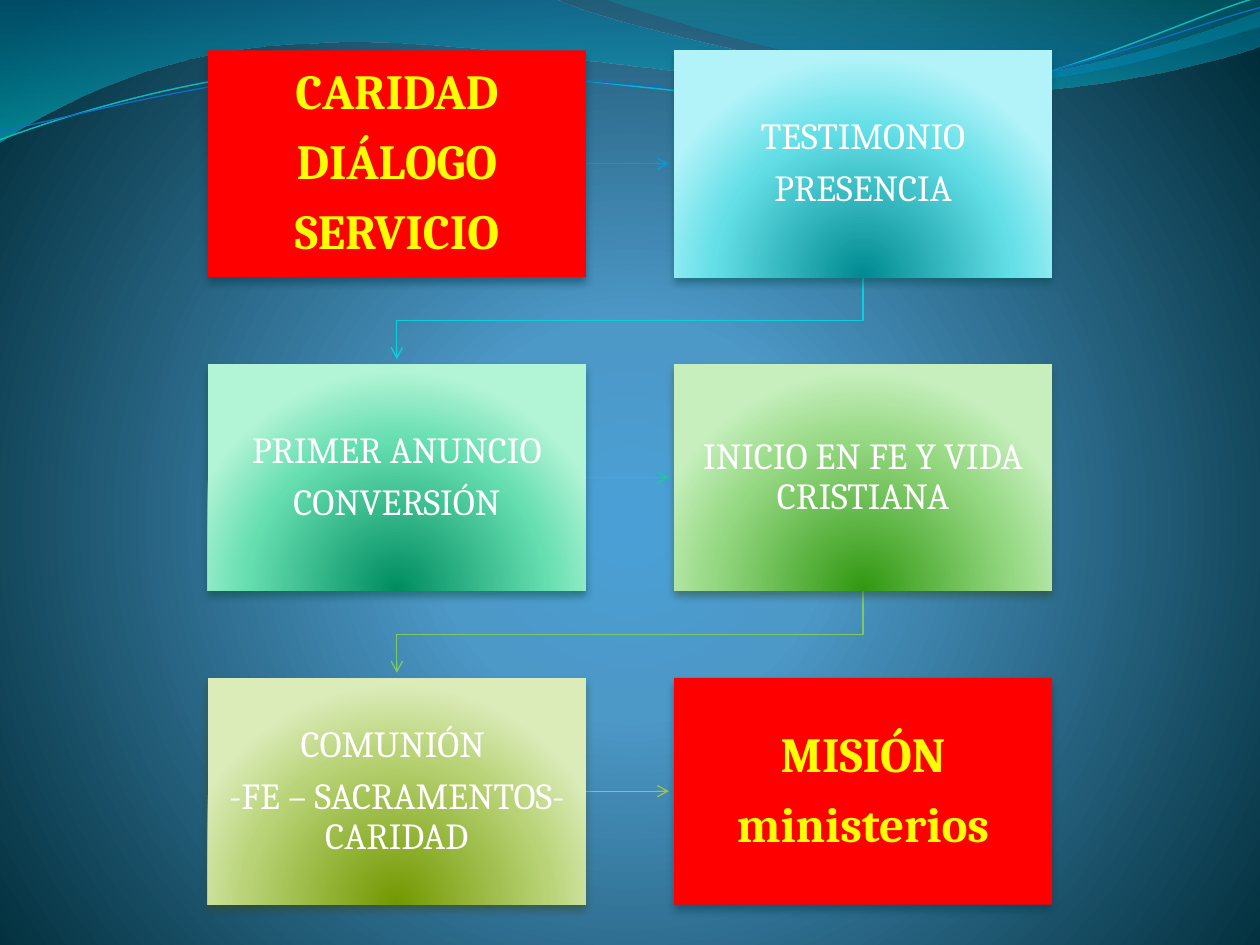
import math
from dataclasses import dataclass
from typing import Optional

from lxml import etree
from pptx import Presentation
from pptx import util as u
from pptx.dml import color as c
from pptx.enum import shapes, text
from pptx.oxml import ns

RGB = c.RGBColor
RED, YELLOW, WHITE = RGB(255, 0, 0), RGB(255, 255, 0), RGB(255, 255, 255)
BLUE, TEAL, NAVY = RGB(0x0F, 0x6F, 0xC6), RGB(0x0A, 0xB8, 0xBF), RGB(0x00, 0x37, 0x4C)
LEFT, TOP, WIDTH, HEIGHT = 1.65, 0.4, 3, 1.8
COLUMN_STEP, ROW_STEP, ARROW_GAP, ARROW_HEIGHT = 3.7, 2.49, 0.04, 0.1
STRAND_TURN = -2.7

Point = tuple[float, float]
Area = tuple[float, float, float, float]
Stop = tuple[int, str, int]


@dataclass
class Step:
    lines: list[str]
    shadow: RGB
    arrow: Optional[RGB] = None
    glow: Optional[list[str]] = None


@dataclass
class Band:
    area: Area
    pieces: list[list[Point]]
    stops: list[Stop]


@dataclass
class Strand:
    area: Area
    pieces: list[list[Point]]
    colour: RGB
    width: float


STEPS = [
    Step(["CARIDAD", "DIÁLOGO", "SERVICIO"], NAVY, RGB(0x00, 0x9D, 0xD9)),
    Step(["TESTIMONIO", "PRESENCIA"], RGB(0x02, 0x4B, 0x4E), RGB(0x0B, 0xD0, 0xD9),
         ["008A91", "64DFE7", "B1F3F9"]),
    Step(["PRIMER ANUNCIO", "CONVERSIÓN"], RGB(0x04, 0x4A, 0x37), RGB(0x10, 0xCF, 0x9B),
         ["008C60", "65DEB0", "B2F4D6"]),
    Step(["INICIO EN FE Y VIDA CRISTIANA"], RGB(0x2B, 0x48, 0x21), RGB(0x7C, 0xCA, 0x62),
         ["319811", "95D882", "C6EFBD"]),
    Step(["COMUNIÓN ", "-FE – SACRAMENTOS-CARIDAD"], RGB(0x3A, 0x45, 0x19),
         RGB(0xA5, 0xC2, 0x49), ["729800", "B8D275", "DBECB9"]),
    Step(["MISIÓN", "ministerios"], NAVY),
]

BANDS = [
    Band((-0.01, -0.01, 10.02, 1.14), [
        [(0, 0)],
        [(4.4, -0.01)],
        [(4.76, 0.17), (6.64, 0.63), (7.58, 0.63)],
        [(8.53, 0.63), (9.58, 0.26), (10, 0.09)],
        [(10.01, 0.36)],
        [(9.83, 0.44), (8.7, 0.76), (7.46, 0.75)],
        [(6.22, 0.75), (3.82, 0.28), (2.57, 0.34)],
        [(1.29, 0.36), (0.46, 0.83), (-0.01, 1.13)],
        [(0, 0)],
    ], [(0, "0074A1", 45), (100, "00C6CF", 55)]),
    Band((4.79, -0.01, 5.21, 0.7), [
        [(4.79, -0.01)],
        [(5.09, 0.11), (6.82, 0.62), (7.69, 0.65)],
        [(8.56, 0.69), (9.61, 0.32), (10, 0.21)],
        [(10, 0)],
        [(4.79, -0.01)],
    ], [(0, "00A1A9", 30), (80, "008BBF", 45)]),
]

STRANDS = [
    Strand((-0.02, 0.22, 10.02, 0.71), [
        [(0, 1.11)],
        [(0.48, 0.93), (1.58, 0.57), (2.77, 0.52)],
        [(3.95, 0.47), (5.93, 0.89), (7.13, 0.8)],
        [(8.33, 0.71), (9.38, 0.15), (9.98, -0.02)],
    ], TEAL, 0.85),
    Strand((-0.02, 0.3, 10.03, 0.58), [
        [(0, 1.04)],
        [(0.47, 0.96), (1.64, 0.61), (2.83, 0.56)],
        [(4.03, 0.51), (5.97, 0.84), (7.17, 0.75)],
        [(8.36, 0.67), (9.41, 0.21), (10, 0.06)],
    ], BLUE, 0.75),
]


def add_node(parent, tag: str, **attributes):
    node = etree.SubElement(parent, ns.qn(tag))
    for name, value in attributes.items():
        node.set(name, str(value))
    return node


def set_gradient(fill, parent, stops: list[Stop], focus=None) -> None:
    fill.solid()
    solid = parent.find(ns.qn("a:solidFill"))
    gradient = etree.Element(ns.qn("a:gradFill"), rotWithShape="1")
    stop_list = add_node(gradient, "a:gsLst")
    for place, colour, alpha in stops:
        stop = add_node(stop_list, "a:gs", pos=place * 1000)
        tint = add_node(stop, "a:srgbClr", val=colour)
        if alpha < 100:
            add_node(tint, "a:alpha", val=alpha * 1000)
    if focus:
        circle = add_node(gradient, "a:path", path="circle")
        add_node(circle, "a:fillToRect", **{side: share * 1000 for side, share in zip("ltrb", focus)})
    else:
        add_node(gradient, "a:lin", ang=5400000, scaled=1)
    parent.replace(solid, gradient)


def turn(point: Point, area: Area, degrees: float) -> Point:
    left, top, width, height = area
    x, y = point[0] - left - width / 2, point[1] - top - height / 2
    cos, sin = math.cos(math.radians(degrees)), math.sin(math.radians(degrees))
    return x * cos - y * sin + width / 2, x * sin + y * cos + height / 2


def add_outline(page, area: Area, pieces: list[list[Point]], *, close: bool = False, rotation: float = 0):
    left, top, width, height = area
    builder = page.shapes.build_freeform(u.Inches(left), u.Inches(top))
    builder.add_line_segments([(u.Inches(left + width), u.Inches(top + height))], close=False)
    outline = builder.convert_to_shape()
    outline.rotation = rotation
    outline.shadow.inherit = False
    outline.fill.background()
    outline.line.fill.background()
    track = outline._element.spPr.find(".//" + ns.qn("a:path"))
    for node in list(track):
        track.remove(node)
    for index, piece in enumerate(pieces):
        tag = "a:cubicBezTo" if len(piece) == 3 else "a:lnTo" if index else "a:moveTo"
        move = add_node(track, tag)
        for point in piece:
            x, y = turn(point, area, -rotation)
            add_node(move, "a:pt", x=u.Inches(x), y=u.Inches(y))
    if close:
        add_node(track, "a:close")
    return outline


def set_line(line, colour: RGB, width: float, arrow: bool = False) -> None:
    line.color.rgb = colour
    line.width = u.Pt(width)
    if arrow:
        add_node(line._get_or_add_ln(), "a:tailEnd", type="arrow")


def write(box, lines: list[str], *, size: int, colour: RGB, bold: bool, inset: float) -> None:
    frame = box.text_frame
    frame.word_wrap = True
    frame.vertical_anchor = text.MSO_ANCHOR.MIDDLE
    frame.margin_left = frame.margin_right = u.Inches(inset)
    frame.margin_top = frame.margin_bottom = u.Inches(inset)
    for index, line in enumerate(lines):
        para = frame.add_paragraph() if index else frame.paragraphs[0]
        para.alignment = text.PP_ALIGN.CENTER
        para.line_spacing = 0.9
        add_node(add_node(para._p.get_or_add_pPr(), "a:spcAft"), "a:spcPct", val=35000)
        span = para.add_run()
        span.text = line
        span.font.name, span.font.size, span.font.bold = "Cambria", u.Pt(size), bold
        span.font.color.rgb = colour


def add_step(page, step: Step, x: float, y: float) -> None:
    box = page.shapes.add_shape(shapes.MSO_SHAPE.RECTANGLE, *map(u.Inches, (x, y, WIDTH, HEIGHT)))
    box.line.fill.background()
    box.shadow.inherit = False
    properties = box._element.spPr
    shadow = add_node(properties.find(ns.qn("a:effectLst")), "a:outerShdw", blurRad=u.Pt(4.5),
                      dist=u.Pt(3), dir=5400000, rotWithShape=0)
    add_node(add_node(shadow, "a:srgbClr", val=step.shadow), "a:alpha", val=48000)
    if step.glow:
        stops = [(place, colour, 100) for place, colour in zip((0, 68, 100), step.glow)]
        set_gradient(box.fill, properties, stops, (50, 130, 50, -30))
        write(box, step.lines, size=21, colour=WHITE, bold=False, inset=0.16)
    else:
        box.fill.solid()
        box.fill.fore_color.rgb = RED
        write(box, step.lines, size=28, colour=YELLOW, bold=True, inset=0.22)


def add_arrow(page, colour: RGB, x: float, y: float, across: bool) -> None:
    if across:
        begin, end, middle = x + WIDTH, x + COLUMN_STEP - ARROW_GAP, y + HEIGHT / 2
        area = (begin, middle - ARROW_HEIGHT / 2, end - begin, ARROW_HEIGHT)
        points = [(begin, middle), (end, middle)]
    else:
        begin, end = x + WIDTH / 2, x + WIDTH / 2 - COLUMN_STEP
        top, bend, bottom = y + HEIGHT, y + (HEIGHT + ROW_STEP) / 2, y + ROW_STEP - ARROW_GAP
        area = (end, top, begin - end, bottom - top)
        points = [(begin, top), (begin, bend), (end, bend), (end, bottom)]
    arrow = add_outline(page, area, [[point] for point in points])
    set_line(arrow.line, colour, 0.75, arrow=True)


def main() -> None:
    deck = Presentation()
    deck.slide_width, deck.slide_height = u.Inches(10), u.Inches(7.5)
    page = deck.slides.add_slide(deck.slide_layouts[6])
    set_gradient(page.background.fill, page._element.find(".//" + ns.qn("p:bgPr")),
                 [(0, "4AA0D6", 100), (25, "4C98C7", 100), (100, "002C38", 100)], (10, 110, 10, 100))
    for band in BANDS:
        outline = add_outline(page, band.area, band.pieces, close=True)
        set_gradient(outline.fill, outline._element.spPr, band.stops)
    for strand in STRANDS:
        outline = add_outline(page, strand.area, strand.pieces, rotation=STRAND_TURN)
        set_line(outline.line, strand.colour, strand.width)
    for index, step in enumerate(STEPS):
        row, column = divmod(index, 2)
        x, y = LEFT + column * COLUMN_STEP, TOP + row * ROW_STEP
        if step.arrow:
            add_arrow(page, step.arrow, x, y, across=column == 0)
        add_step(page, step, x, y)
    deck.save("out.pptx")


if __name__ == "__main__":
    main()
